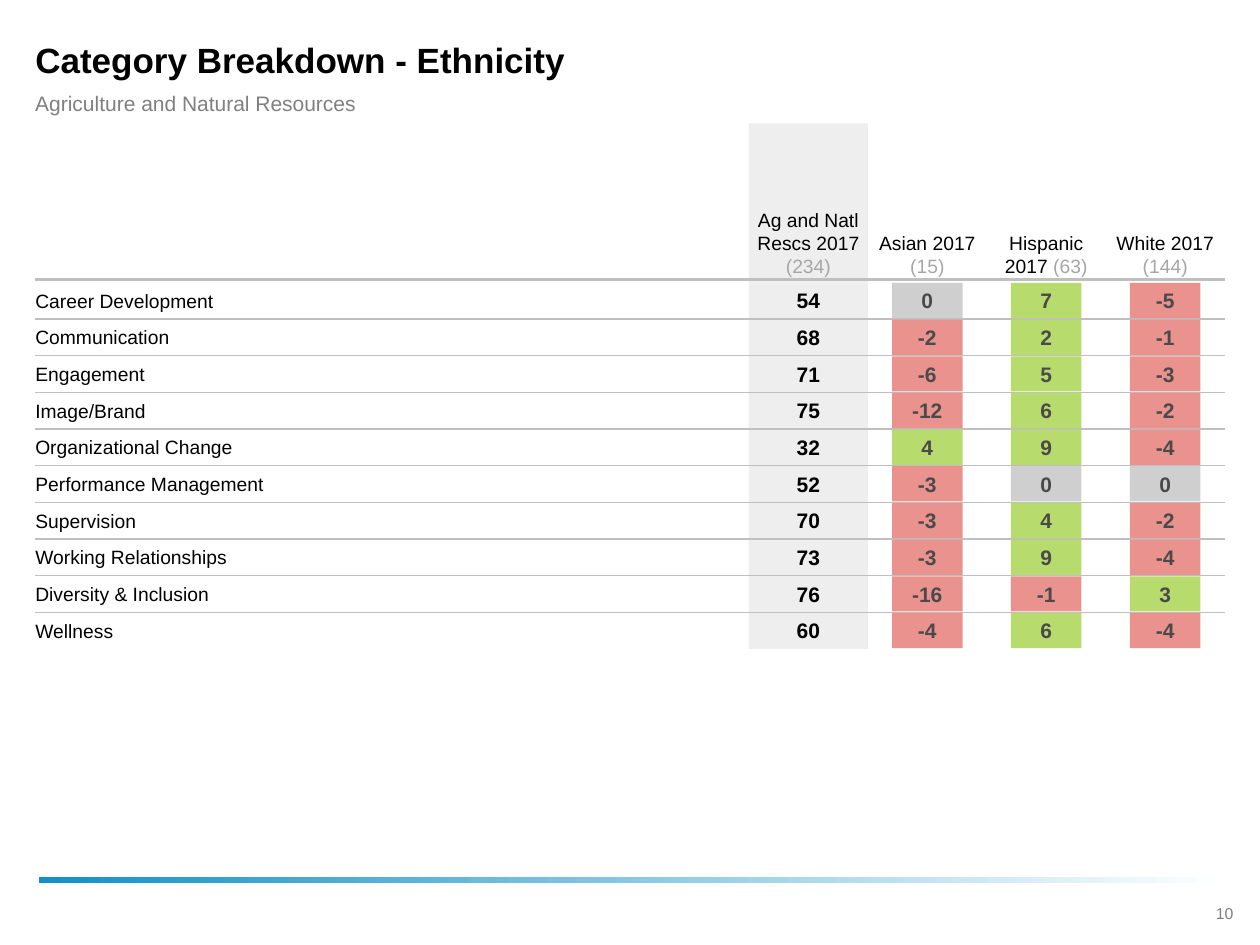
import collections
import dataclasses

import pptx
import pptx.dml.color
import pptx.enum.shapes
import pptx.enum.text
import pptx.oxml.ns
import pptx.util
from lxml import etree

Inches = pptx.util.Inches
Pt = pptx.util.Pt
Align = pptx.enum.text.PP_ALIGN
Anchor = pptx.enum.text.MSO_ANCHOR
Box = collections.namedtuple("Box", "left top width height")


@dataclasses.dataclass(frozen=True)
class Theme:
    font: str = "Arial"
    ink: str = "000000"
    subtitle: str = "808080"
    page_number: str = "7F7F7F"
    count: str = "A6A6A6"
    rule: str = "BFBFBF"
    band: str = "EEEEEE"
    chip_ink: str = "4A4A4A"
    above: str = "B7DB6C"
    same: str = "CFCFCF"
    below: str = "E9928E"
    bar_start: str = "1291C7"
    bar_end: str = "FFFFFF"
    title_size: int = 20
    value_size: int = 12
    label_size: int = 11
    number_size: int = 9


THEME = Theme()

GROUPS = [
    ("Ag and Natl Rescs 2017 ", "(234)"),
    ("Asian 2017 ", "(15)"),
    ("Hispanic 2017 ", "(63)"),
    ("White 2017 ", "(144)"),
]
CATEGORIES = [
    ("Career Development", 54, (0, 7, -5)),
    ("Communication", 68, (-2, 2, -1)),
    ("Engagement", 71, (-6, 5, -3)),
    ("Image/Brand", 75, (-12, 6, -2)),
    ("Organizational Change", 32, (4, 9, -4)),
    ("Performance Management", 52, (-3, 0, 0)),
    ("Supervision", 70, (-3, 4, -2)),
    ("Working Relationships", 73, (-3, 9, -4)),
    ("Diversity & Inclusion", 76, (-16, -1, 3)),
    ("Wellness", 60, (-4, 6, -4)),
]


def rgb(code):
    return pptx.dml.color.RGBColor.from_string(code)


def place(shape, box):
    shape.left, shape.top, shape.width, shape.height = (Inches(side) for side in box)


def write(shape, spans, size, align=Align.LEFT, anchor=Anchor.MIDDLE,
          insets=(0, 0, 0, 0), bold=False, wrap=True):
    frame = shape.text_frame
    frame.auto_size = pptx.enum.text.MSO_AUTO_SIZE.NONE
    frame.word_wrap = wrap
    frame.vertical_anchor = anchor
    (frame.margin_left, frame.margin_top,
     frame.margin_right, frame.margin_bottom) = (Inches(inset) for inset in insets)
    para = frame.paragraphs[0]
    para.alignment = align
    for text, color in spans:
        span = para.add_run()
        span.text = text
        span.font.name = THEME.font
        span.font.size = Pt(size)
        span.font.bold = bold
        span.font.color.rgb = rgb(color)


def add_text(page, box, spans, size, **style):
    write(page.shapes.add_textbox(*(Inches(side) for side in box)), spans, size, **style)


def add_block(page, box, color=None):
    block = page.shapes.add_shape(
        pptx.enum.shapes.MSO_SHAPE.RECTANGLE, *(Inches(side) for side in box))
    block.shadow.inherit = False
    block.line.fill.background()
    if color:
        block.fill.solid()
        block.fill.fore_color.rgb = rgb(color)
    return block


def add_rule(page, left, right, top, weight):
    rule = page.shapes.add_connector(
        pptx.enum.shapes.MSO_CONNECTOR.STRAIGHT,
        Inches(left), Inches(top), Inches(right), Inches(top))
    rule.line.color.rgb = rgb(THEME.rule)
    rule.line.width = Pt(weight)
    etree.SubElement(rule.element.spPr, pptx.oxml.ns.qn("a:effectLst"))


def add_heading(page, box):
    insets = (0, 0, 0.35, 0)
    title = page.shapes.title
    place(title, box._replace(height=0.38))
    write(title, [("Category Breakdown - Ethnicity", THEME.ink)], THEME.title_size,
          insets=insets, bold=True)
    add_text(page, box._replace(top=box.top + 0.43, height=0.21),
             [("Agriculture and Natural Resources", THEME.subtitle)],
             THEME.value_size, insets=insets)


def add_scores(page, box):
    header_height = 1.26
    column = box.width / 10
    label_width = box.width - len(GROUPS) * column
    row_height = (box.height - header_height) / len(CATEGORIES)
    right = box.left + box.width
    lefts = [box.left + label_width + index * column for index in range(len(GROUPS))]
    tops = [box.top + header_height + index * row_height
            for index in range(len(CATEGORIES))]
    cell_style = dict(align=Align.CENTER, insets=(0.03, 0.03, 0.03, 0.03))

    add_block(page, Box(lefts[0], box.top, column, header_height), THEME.band)
    for top in tops:
        add_block(page, Box(lefts[0], top, column, row_height), THEME.band)

    add_rule(page, box.left, right, tops[0] - 0.02, 1.5)
    for left, (name, count) in zip(lefts, GROUPS):
        add_text(page, Box(left, box.top, column, header_height - 0.01),
                 [(name, THEME.ink), (count, THEME.count)], THEME.label_size,
                 anchor=Anchor.BOTTOM, **cell_style)

    for top, (category, score, gaps) in zip(tops, CATEGORIES):
        if top != tops[-1]:
            add_rule(page, box.left, right, top + row_height, 0.75)
        add_text(page, Box(box.left, top + 0.03, label_width, row_height - 0.06),
                 [(category, THEME.ink)], THEME.label_size)
        add_text(page, Box(lefts[0], top, column, row_height),
                 [(str(score), THEME.ink)], THEME.value_size, bold=True, **cell_style)
        for left, gap in zip(lefts[1:], gaps):
            add_chip(page, Box(left, top, column, row_height), gap)


def add_chip(page, cell, gap):
    width, height = 0.56, 0.28
    color = THEME.above if gap > 0 else THEME.below if gap < 0 else THEME.same
    chip = add_block(page, Box(cell.left + (cell.width - width) / 2,
                               cell.top + (cell.height - height) / 2,
                               width, height), color)
    write(chip, [(str(gap), THEME.chip_ink)], THEME.value_size, align=Align.CENTER,
          insets=(0, 0.05, 0, 0.05), bold=True, wrap=False)


def add_footer(page, box):
    bar = add_block(page, Box(box.left, box.top, 9.42, 0.05))
    bar.fill.gradient()
    bar.fill.gradient_angle = 0
    for stop, color in zip(bar.fill.gradient_stops, (THEME.bar_start, THEME.bar_end)):
        stop.color.rgb = rgb(color)
    number_width = 0.52
    add_text(page, Box(box.left + box.width - number_width, box.top + 0.16,
                       number_width, 0.25),
             [("10", THEME.page_number)], THEME.number_size, align=Align.CENTER,
             anchor=Anchor.TOP, insets=(0.1, 0.05, 0.1, 0.05))


def main():
    deck = pptx.Presentation()
    deck.slide_width, deck.slide_height = Inches(10), Inches(7.5)
    page = deck.slides.add_slide(deck.slide_layouts.get_by_name("Title Only"))
    add_footer(page, Box(0.31, 6.96, 9.67, 0.41))
    add_heading(page, Box(0.28, 0.28, 9.44, 0.64))
    add_scores(page, Box(0.28, 0.98, 9.44, 4.17))
    deck.save("out.pptx")


if __name__ == "__main__":
    main()
